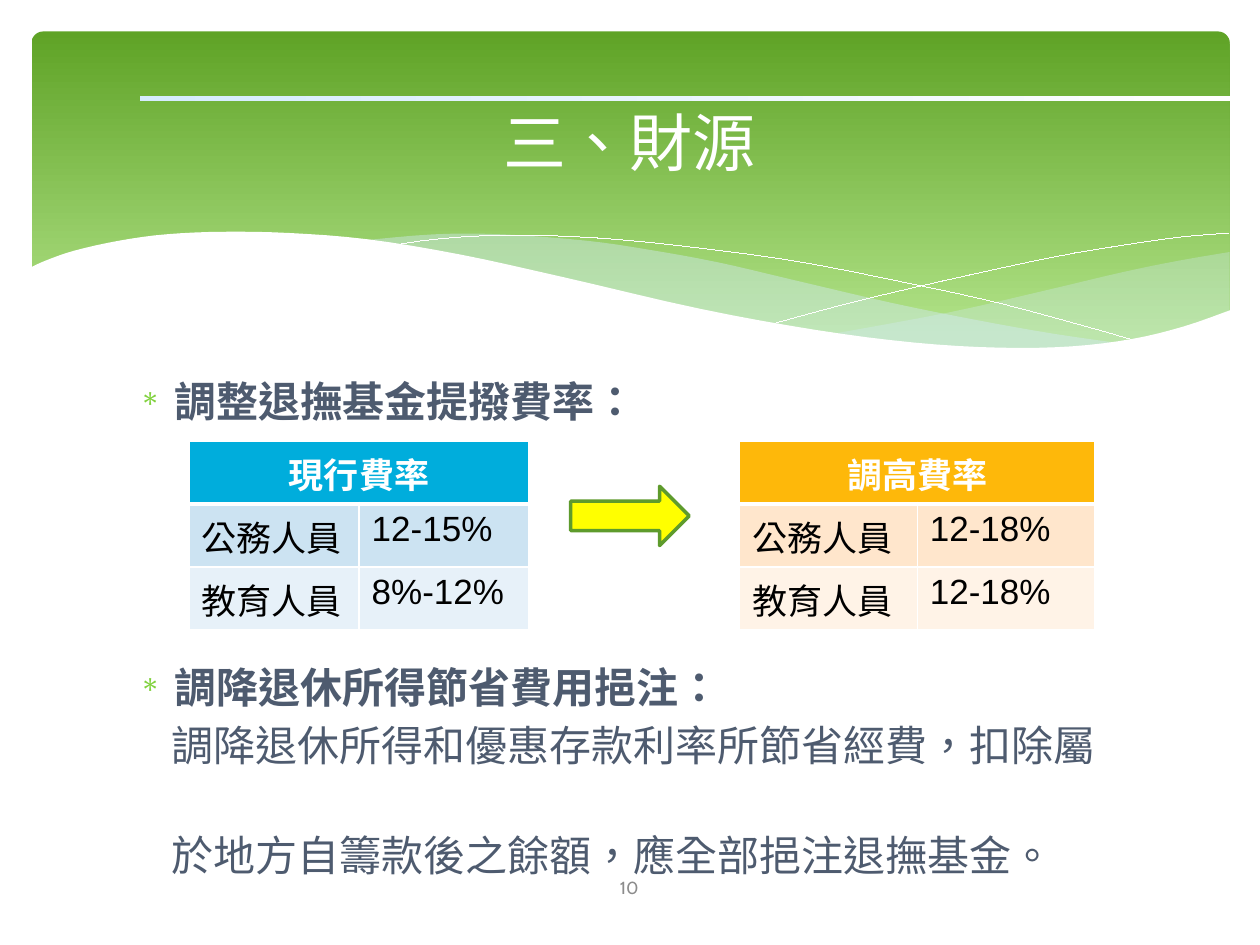
"""Build the funding slide: wave banner, two rate tables and the notes around them."""
from lxml import etree
from pptx import Presentation, util as u
from pptx.dml.color import RGBColor
from pptx.enum import shapes, text
from pptx.oxml import ns

WHITE = RGBColor(255, 255, 255)
BLACK = RGBColor(0, 0, 0)
SLATE = RGBColor(0x4E, 0x5B, 0x6F)
GRAY = RGBColor(0x8C, 0x8C, 0x8C)
ICE = RGBColor(0xD6, 0xEC, 0xFF)
DEEP_GREEN = RGBColor(0x5F, 0xA3, 0x26)
PALE_GREEN = RGBColor(0xB2, 0xE3, 0x89)
BULLET_GREEN = RGBColor(0x7F, 0xD1, 0x3B)
OUTLINE_GREEN = RGBColor(0x5E, 0x9B, 0x2C)
YELLOW = RGBColor(255, 255, 0)
BLUE_ROWS = (RGBColor(0, 0xAD, 0xDC), RGBColor(0xCC, 0xE3, 0xF2), RGBColor(0xE7, 0xF1, 0xF9))
ORANGE_ROWS = (RGBColor(0xFE, 0xB8, 0x0A), RGBColor(0xFF, 0xE6, 0xCC), RGBColor(0xFF, 0xF3, 0xE7))

presentation = Presentation()
presentation.slide_width, presentation.slide_height = u.Inches(10), u.Inches(7.5)
CELL = presentation.slide_width // 1000
slide = presentation.slides.add_slide(presentation.slide_layouts[6])


def write(paragraph, words, size, color, font="Cabin", bold=False, align=None):
    paragraph.alignment = align
    run = paragraph.add_run()
    run.text = words
    run.font.size, run.font.name, run.font.bold = u.Pt(size), font, bold
    run.font.color.rgb = color
    run._r.get_or_add_rPr().set("lang", "zh-TW")


def add_wave(*edges, fill=None, alpha=100):
    points = []
    for edge in edges:
        padded = [edge[0], *edge, edge[-1]]
        points.append([v * CELL for v in edge[0]])
        for a, b, c, d in zip(padded, padded[1:], padded[2:], padded[3:]):
            for t in (0.25, 0.5, 0.75, 1):
                points.append([
                    CELL * (q + t * ((r - p) + t * ((2 * p - 5 * q + 4 * r - s)
                                                    + t * (3 * q - p - 3 * r + s))) / 2)
                    for p, q, r, s in zip(a, b, c, d)])
    builder = slide.shapes.build_freeform(*points[0])
    builder.add_line_segments(points[1:], close=fill is not None)
    wave = builder.convert_to_shape()
    wave.shadow.inherit = False
    if fill is None:
        wave.fill.background()
        wave.line.color.rgb = WHITE
        wave.line.width = 1
        return
    wave.line.fill.background()
    wave.fill.solid()
    wave.fill.fore_color.rgb = fill
    if alpha < 100:
        color = wave.fill._xPr.find(".//" + ns.qn("a:srgbClr"))
        etree.SubElement(color, ns.qn("a:alpha"), val=str(alpha * 1000))


for kind, (left, top, width, height), angle, colors, end in (
    (shapes.MSO_SHAPE.ROUNDED_RECTANGLE, (25, 25, 951, 270), 270, (DEEP_GREEN, PALE_GREEN), 0.9),
    (shapes.MSO_SHAPE.RECTANGLE, (111, 76, 877, 4), 0, (ICE, WHITE), 1),
):
    panel = slide.shapes.add_shape(kind, left * CELL, top * CELL, width * CELL, height * CELL)
    panel.shadow.inherit = False
    panel.line.fill.background()
    panel.fill.gradient()
    panel.fill.gradient_angle = angle
    for stop, color, position in zip(panel.fill.gradient_stops, colors, (0, end)):
        stop.color.rgb, stop.position = color, position
    if kind == shapes.MSO_SHAPE.ROUNDED_RECTANGLE:
        panel.adjustments[0] = 0.034

add_wave([(976, 200), (935, 207), (891, 216), (832, 230), (753, 248), (661, 265)],
         [(661, 265), (705, 271), (757, 276), (814, 278), (872, 274), (921, 265), (949, 257), (976, 247)],
         fill=ICE, alpha=29)
add_wave([(893, 273), (837, 265), (775, 254), (706, 240), (629, 222), (569, 208), (514, 198),
          (465, 191), (399, 186), (344, 186), (286, 191)],
         [(286, 191), (342, 199), (404, 211), (491, 232), (566, 248), (634, 261), (695, 270),
          (748, 276), (807, 278), (857, 277), (893, 273)],
         fill=ICE, alpha=40)
add_wave([(309, 195), (344, 190), (387, 187), (433, 187), (489, 190), (556, 197), (636, 208),
          (727, 226), (795, 241), (869, 261), (907, 272)])
add_wave([(613, 257), (672, 241), (748, 223), (836, 204), (895, 194), (938, 188), (975, 185)])
add_wave([(977, 246), (940, 259), (899, 269), (850, 275), (793, 276), (726, 272), (648, 262),
          (555, 245), (447, 220), (365, 202), (292, 190), (230, 185), (177, 184), (132, 186),
          (95, 191), (59, 199), (36, 207), (23, 213)],
         [(23, 329), (977, 329)], fill=WHITE)

CENTER = text.PP_ALIGN.CENTER
for words, (left, top, width, height), size, color in (
    ("三、財源", (50, 44, 900, 137), 36, WHITE),
    ("10", (436, 684, 127, 40), 10, GRAY),
):
    frame = slide.shapes.add_textbox(left * CELL, top * CELL, width * CELL, height * CELL).text_frame
    frame.word_wrap = True
    frame.vertical_anchor = text.MSO_ANCHOR.MIDDLE
    write(frame.paragraphs[0], words, size, color, align=CENTER)

body = slide.shapes.add_textbox(95 * CELL, 293 * CELL, 810 * CELL, 377 * CELL).text_frame
body.word_wrap = True
for index, (words, before, is_heading) in enumerate((
    ("調整退撫基金提撥費率：", 0, True),
    ("調降退休所得節省費用挹注：", 134.5, True),
    ("調降退休所得和優惠存款利率所節省經費，扣除屬", 4.5, False),
    ("於地方自籌款後之餘額，應全部挹注退撫基金。", 34, False),
)):
    paragraph = body.add_paragraph() if index else body.paragraphs[0]
    properties = paragraph._p.get_or_add_pPr()
    properties.set("marL", str((34 if is_heading else 31) * CELL))
    if is_heading:
        properties.set("indent", str(-28 * CELL))
        bullet_color = etree.SubElement(properties, ns.qn("a:buClr"))
        etree.SubElement(bullet_color, ns.qn("a:srgbClr"), val=str(BULLET_GREEN))
        etree.SubElement(properties, ns.qn("a:buSzPct"), val="70000")
        etree.SubElement(properties, ns.qn("a:buChar"), char="∗")
    paragraph.space_before = u.Pt(before)
    write(paragraph, words, 24, SLATE, bold=is_heading)

for left, column, fills, rows in (
    (150, 135, BLUE_ROWS, (("現行費率", ""), ("公務人員", "12-15%"), ("教育人員", "8%-12%"))),
    (587, 141, ORANGE_ROWS, (("調高費率", ""), ("公務人員", "12-18%"), ("教育人員", "12-18%"))),
):
    table = slide.shapes.add_table(
        3, 2, left * CELL, 350 * CELL, 2 * column * CELL, 150 * CELL).table
    table.cell(0, 0).merge(table.cell(0, 1))
    for table_column in table.columns:
        table_column.width = column * CELL
    for r, (fill, values) in enumerate(zip(fills, rows)):
        for c, value in enumerate(values):
            cell = table.cell(r, c)
            for side in ("L", "R", "T", "B"):
                thick = (r, side) in ((0, "B"), (1, "T"))
                border = etree.SubElement(cell._tc.get_or_add_tcPr(), ns.qn("a:ln" + side),
                                          w=str(u.Pt(3 if thick else 1)))
                solid = etree.SubElement(border, ns.qn("a:solidFill"))
                etree.SubElement(solid, ns.qn("a:srgbClr"), val=str(WHITE))
            cell.fill.solid()
            cell.fill.fore_color.rgb = fill
            if value:
                write(cell.text_frame.paragraphs[0], value, 20, BLACK if r else WHITE,
                      font="Arial" if c else "Roboto", bold=r == 0, align=None if r else CENTER)

arrow = slide.shapes.add_shape(
    shapes.MSO_SHAPE.RIGHT_ARROW, 453 * CELL, 386 * CELL, 94 * CELL, 47 * CELL)
arrow.shadow.inherit = False
arrow.fill.solid()
arrow.fill.fore_color.rgb = YELLOW
arrow.line.color.rgb = OUTLINE_GREEN
arrow.line.width = u.Pt(2)

presentation.save("out.pptx")
